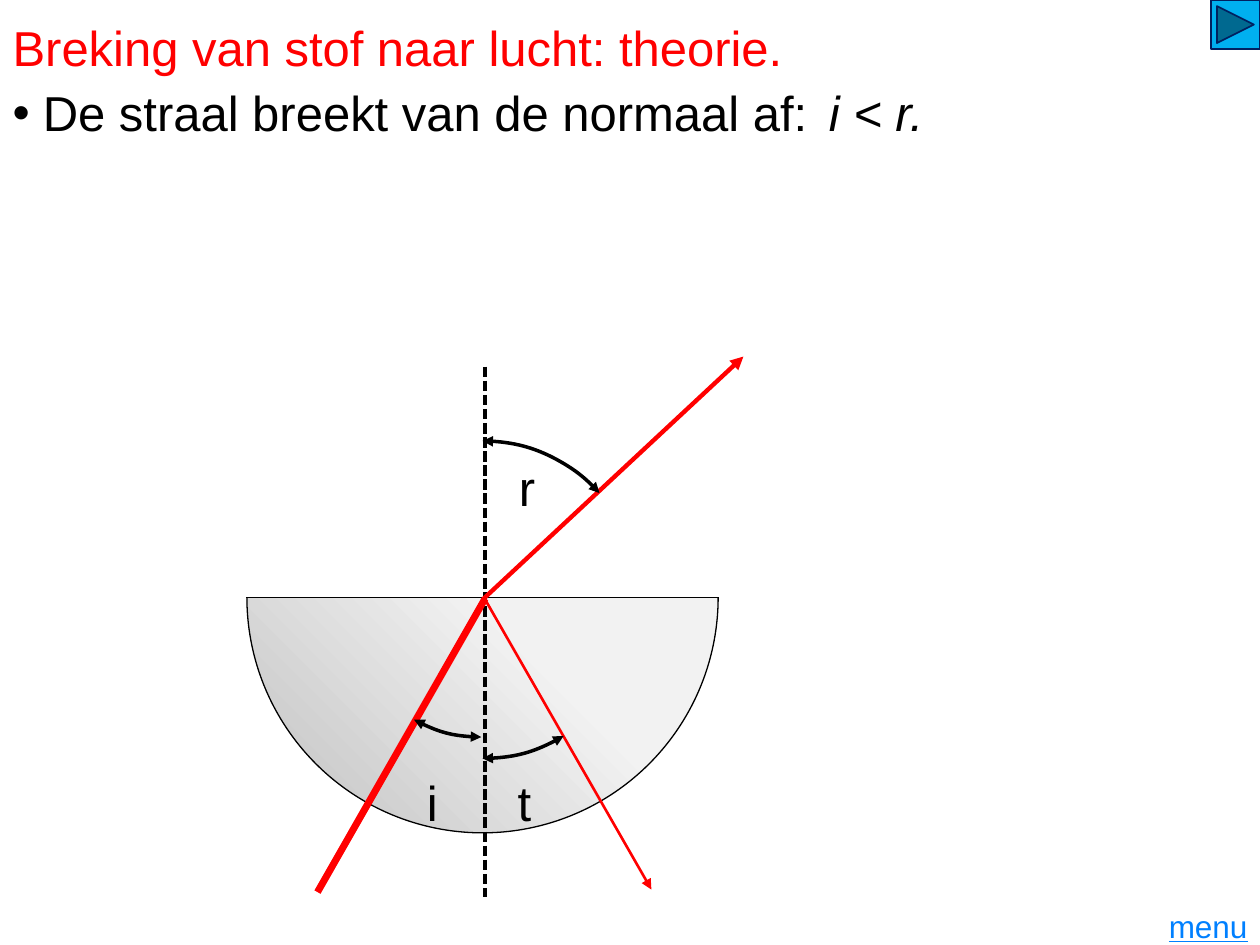
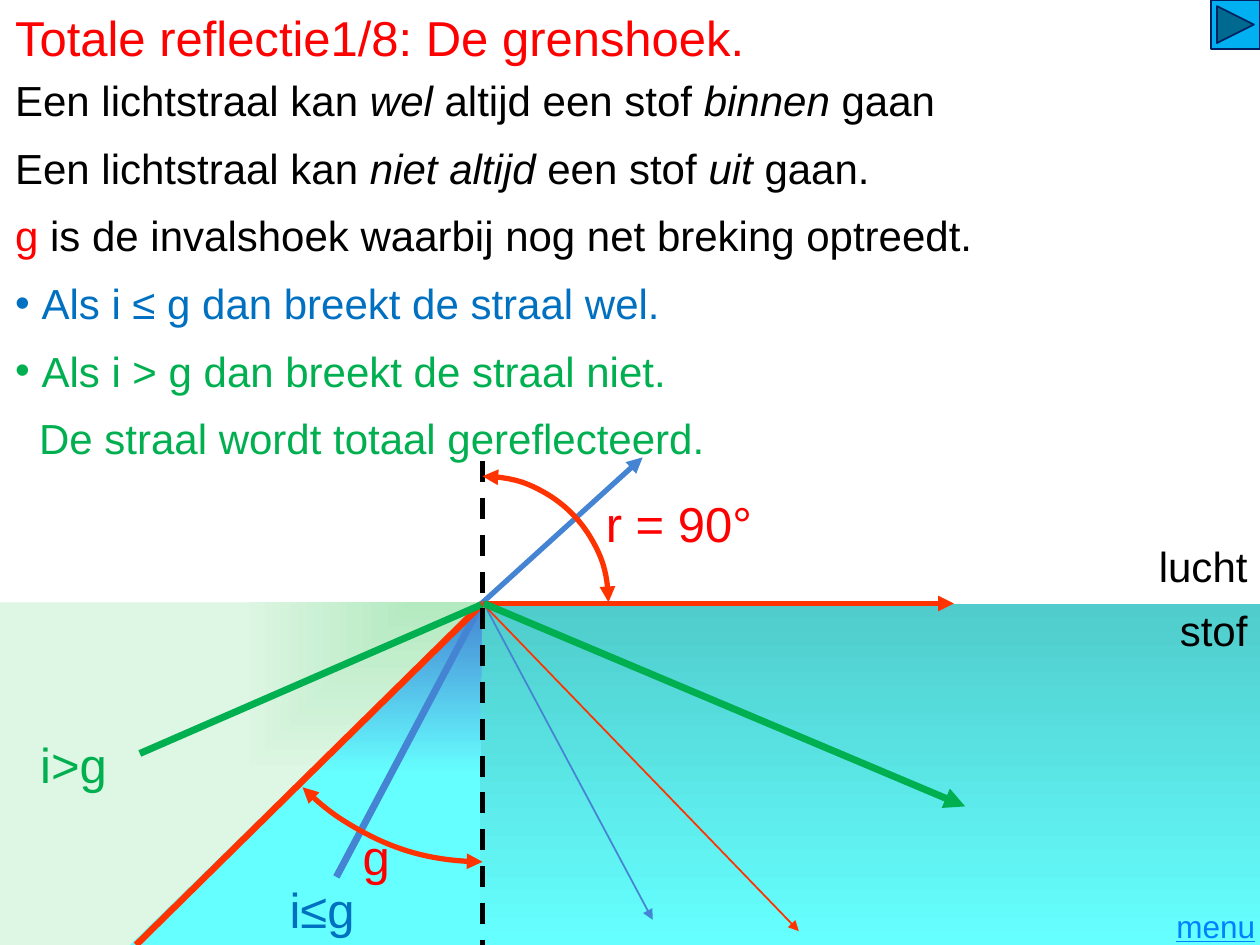
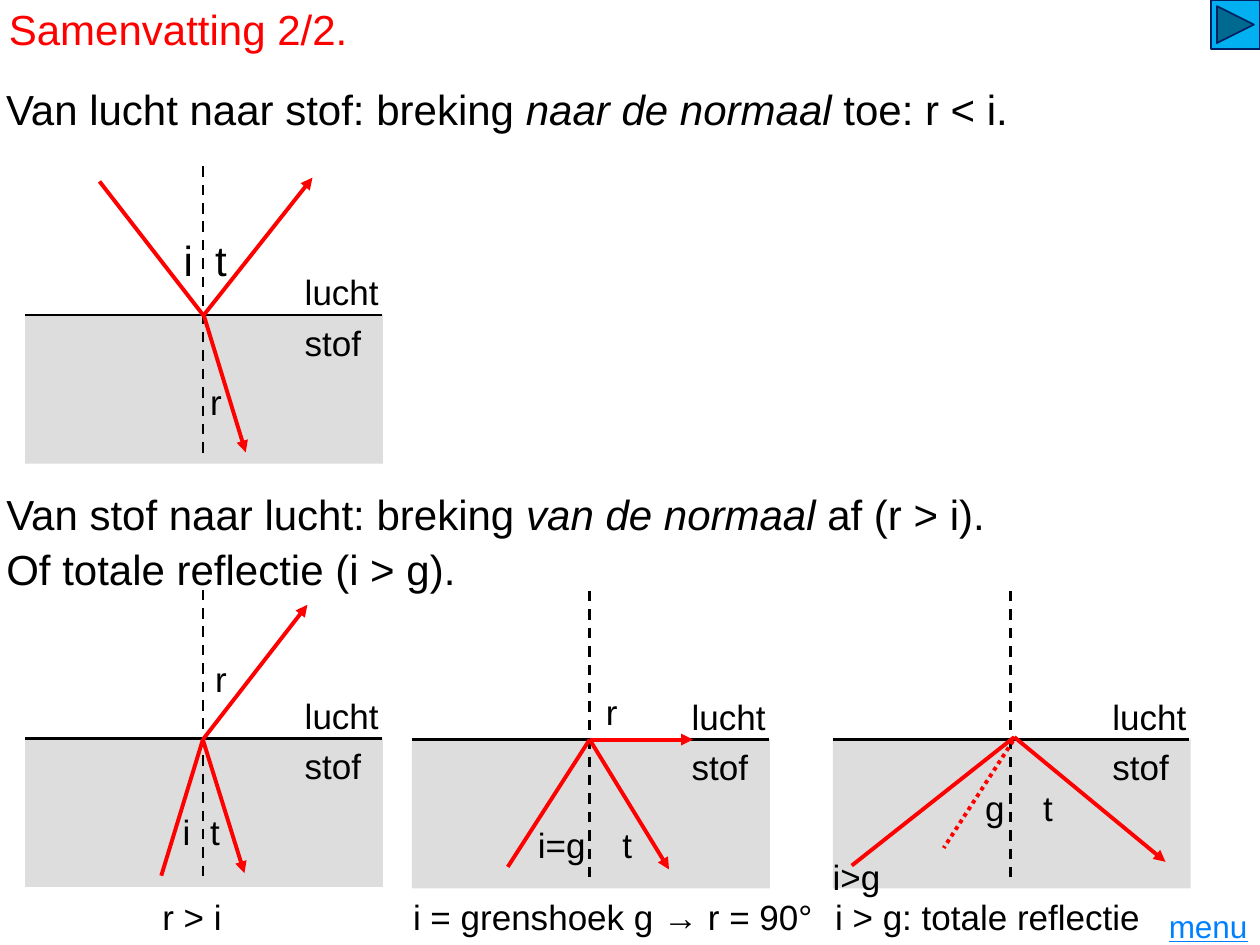
from lxml import etree
from pptx import Presentation
from pptx import util as u
from pptx.dml.color import RGBColor
from pptx.enum import dml, shapes, text
from pptx.oxml.ns import qn

COLORS = {
    "black": "000000", "red": "FF0000", "orange": "FF3300", "blue": "0070C0",
    "ray blue": "4584D3", "green": "00B050", "link": "0080FF", "grey": "DDDDDD",
    "button": "00B0F0", "navy": "002060", "light grey": "F2F2F2", "mid grey": "BFBFBF",
    "teal": "50CCCC", "cyan": "66FFFF", "mint": "B4EAC0", "pale mint": "DEF6E4",
}
RGB = {name: RGBColor.from_string(value) for name, value in COLORS.items()}
FONT = "Arial"
TOP, MIDDLE = text.MSO_ANCHOR.TOP, text.MSO_ANCHOR.MIDDLE
LEFT, RIGHT = text.PP_ALIGN.LEFT, text.PP_ALIGN.RIGHT
DASH, SHORT_DASH, DOTS = (dml.MSO_LINE.DASH, dml.MSO_LINE.SQUARE_DOT,
                          dml.MSO_LINE.ROUND_DOT)
ARC, RECTANGLE = shapes.MSO_SHAPE.ARC, shapes.MSO_SHAPE.RECTANGLE
STRAIGHT = shapes.MSO_CONNECTOR.STRAIGHT
ITALIC = {"italic": True}


def write(box, at, lines, size, ink="black", anchor=TOP, align=LEFT, gap=0, **formats):
    """Place a text shape and fill it.

    A line is a string or a dict with text, ink, accent, margin and bullet;
    the words between asterisks get the accent format.
    """
    box.left, box.top, box.width, box.height = map(u.Inches, at)
    frame = box.text_frame
    frame.word_wrap = True
    frame.auto_size = text.MSO_AUTO_SIZE.NONE
    frame.vertical_anchor = anchor
    for number, line in enumerate(lines if isinstance(lines, list) else [lines]):
        line = {"text": line} if isinstance(line, str) else line
        para = frame.add_paragraph() if number else frame.paragraphs[0]
        margin, bullet = u.Inches(line.get("margin", 0)), line.get("bullet")
        props = para._p.get_or_add_pPr()
        props.set("marL", str(margin))
        props.set("indent", str(-margin if bullet else 0))
        if bullet:
            etree.SubElement(props, qn("a:buFont")).set("typeface", FONT)
            etree.SubElement(props, qn("a:buChar")).set("char", "•")
        else:
            etree.SubElement(props, qn("a:buNone"))
        para.alignment = align
        para.space_before = u.Pt(gap if number else 0)
        for index, words in enumerate(line["text"].split("*")):
            if not words:
                continue
            span = para.add_run()
            span.text = words
            accent = line.get("accent", ITALIC) if index % 2 else {}
            values = {"name": FONT, "size": u.Pt(size), **formats, **accent}
            color = values.pop("ink", line.get("ink", ink))
            for name, value in values.items():
                setattr(span.font, name, value)
            span.font.color.rgb = RGB[color]


def stroke(shape, ink, width, dash=None, arrows=()):
    """Set an outline without shadow; arrows holds "head" and/or "tail"."""
    shape.line.color.rgb = RGB[ink]
    shape.line.width = u.Pt(width)
    if dash:
        shape.line.dash_style = dash
    props = shape._element.spPr
    for end in arrows:
        etree.SubElement(props.find(qn("a:ln")), qn(f"a:{end}End")).set("type", "triangle")
    etree.SubElement(props, qn("a:effectLst"))


BOTH, TAIL = ("head", "tail"), ("tail",)
deck = Presentation()
deck.slide_width, deck.slide_height = u.Inches(10), u.Inches(7.5)
layout = deck.slide_layouts[1]
refraction, critical, summary = pages = [deck.slides.add_slide(layout) for _ in range(3)]
gradients = []  # shape, start colour, end colour, start position, angle (None: from corner)
strokes = []    # page, start, end, colour, width, dash, arrows
labels = []     # page, box, words, size, colour, alignment

# Titles
for page, at, words, size, anchor in [
    (refraction, (0, 0, 7.83, 0.75), "Breking van stof naar lucht: theorie.", 28, MIDDLE),
    (critical, (0.02, 0.01, 9.5, 0.57), "Totale reflectie1/8: De grenshoek.", 28, TOP),
    (summary, (-0.03, -0.02, 3.54, 0.5), "Samenvatting 2/2.", 24, TOP),
]:
    write(page.shapes.title, at, words, size, "red", anchor)

# From substance to air
write(refraction.placeholders[1], (0, 0.64, 8.23, 0.5),
      {"text": "De straal breekt van de normaal af:", "margin": 0.24, "bullet": True},
      28, anchor=MIDDLE)
write(refraction.shapes.add_textbox(0, 0, 0, 0), (6.48, 0.6, 1.22, 0.58),
      "*i < r.*", 28, anchor=MIDDLE)
half_disc = refraction.shapes.add_shape(ARC, *map(u.Inches, (1.96, 2.87, 3.74, 3.74)))
half_disc.adjustments[0], half_disc.adjustments[1] = 0, 108
stroke(half_disc, "black", 0)
gradients.append((half_disc, "light grey", "mid grey", 0.5, 225))
strokes += [
    (refraction, (5.7, 4.74), (1.96, 4.74), "black", 0.75, None, ()),
    (refraction, (3.85, 2.91), (3.85, 7.12), "black", 2, SHORT_DASH, ()),
    (refraction, (2.52, 7.08), (3.85, 4.75), "red", 4, None, ()),
    (refraction, (3.84, 4.75), (5.9, 2.83), "red", 2.5, None, TAIL),
    (refraction, (3.84, 4.74), (5.17, 7.06), "red", 1.5, None, TAIL),
]
labels += [(refraction, (left, top, 0.75, 0.57), words, 28, "black", LEFT)
           for left, top, words in [(3.29, 6.08, "i"), (4.02, 3.58, "r"), (4.01, 6.08, "t")]]

# Critical angle
write(critical.placeholders[1], (0.02, 0.54, 9.58, 3.15), [
    "Een lichtstraal kan *wel *altijd een stof *binnen *gaan",
    "Een lichtstraal kan *niet altijd *een stof *uit *gaan.",
    {"text": "*g* is de invalshoek waarbij nog net breking optreedt.", "accent": {"ink": "red"}},
    {"text": "Als i ≤ g dan breekt de straal wel.", "ink": "blue", "margin": 0.21, "bullet": True},
    {"text": "Als i > g dan breekt de straal niet.", "ink": "green", "margin": 0.21,
     "bullet": True},
    {"text": "De straal wordt totaal gereflecteerd.", "ink": "green", "margin": 0.19},
], 24, gap=9.9)
substance = critical.shapes.add_shape(RECTANGLE, *map(u.Inches, (0, 4.79, 10, 2.71)))
gradients.append((substance, "teal", "cyan", 0, 270))
for corners, start, end in [
    ([(3.82, 4.79), (3.81, 7.5), (1.02, 7.5)], "ray blue", "cyan"),
    ([(3.82, 4.78), (1.03, 7.5), (0, 7.5), (0, 4.78)], "mint", "pale mint"),
]:
    outline = [tuple(map(u.Inches, corner)) for corner in corners]
    builder = critical.shapes.build_freeform(*outline[0], scale=1.0)
    builder.add_line_segments(outline[1:], close=True)
    gradients.append((builder.convert_to_shape(), start, end, 0, None))
for shape, *_ in gradients[1:]:
    shape.line.fill.background()
    shape.shadow.inherit = False
strokes += [
    (critical, (3.81, 4.8), (5.1, 3.63), "ray blue", 3, None, TAIL),
    (critical, (3.84, 4.79), (5.18, 7.3), "ray blue", 1, None, TAIL),
    (critical, (3.83, 4.79), (6.34, 7.39), "orange", 1, None, TAIL),
    (critical, (3.83, 4.79), (7.57, 4.79), "orange", 3, None, TAIL),
    (critical, (2.67, 6.96), (3.82, 4.79), "ray blue", 4, None, ()),
    (critical, (1.08, 7.5), (3.83, 4.79), "orange", 3.75, None, ()),
    (critical, (1.11, 5.98), (3.82, 4.8), "green", 4, None, ()),
    (critical, (3.84, 4.79), (7.66, 6.4), "green", 4, None, TAIL),
    (critical, (3.83, 3.66), (3.83, 7.5), "black", 3, DASH, ()),
]
labels += [
    (critical, (8.5, 4.24, 1.5, 0.5), "lucht", 24, "black", RIGHT),
    (critical, (8.5, 4.75, 1.5, 0.5), "stof", 24, "black", RIGHT),
    (critical, (2.2, 6.93, 0.75, 0.57), "i≤g", 28, "blue", LEFT),
    (critical, (0.22, 5.78, 0.92, 0.57), "i>g", 28, "green", LEFT),
    (critical, (2.78, 6.51, 0.75, 0.57), "g", 28, "red", LEFT),
    (critical, (4.71, 3.87, 1.92, 0.57), "r = 90°", 28, "red", LEFT),
]

# Summary: each panel has a surface, a normal, rays and labels
write(summary.shapes.add_textbox(0, 0, 0, 0), (-0.05, 0.61, 9.96, 0.5),
      "Van lucht naar stof: breking *naar de normaal *toe: r < i.", 24)
write(summary.placeholders[1], (-0.05, 3.83, 9.96, 0.92),
      ["Van stof naar lucht: breking *van de normaal *af (r > i).",
       "Of totale reflectie (i > g)."], 24, gap=2.6)
panels = [  # left, surface, rays (start, end, dash, arrows), labels (left, top, words, size)
    (0.2, 2.5,
     [((0.79, 1.44), (1.62, 2.51), None, ()), ((1.62, 2.51), (1.95, 3.59), None, TAIL),
      ((1.61, 2.51), (2.48, 1.41), None, TAIL)],
     [(1.36, 1.81, "i", 24), (1.61, 1.81, "t", 24), (1.57, 2.97, "r", 20)]),
    (0.2, 5.86,
     [((1.28, 6.95), (1.61, 5.87), None, ()), ((1.61, 5.87), (2.44, 4.8), None, TAIL),
      ((1.61, 5.87), (1.94, 6.93), None, TAIL)],
     [(1.35, 6.38, "i", 20), (1.57, 6.38, "t", 20), (1.61, 5.17, "r", 20)]),
    (3.27, 5.87,
     [((4.03, 6.88), (4.68, 5.87), None, ()), ((4.68, 5.87), (5.5, 5.87), None, TAIL),
      ((4.68, 5.87), (5.31, 6.9), None, TAIL)],
     [(4.17, 6.49, "i=g", 20), (4.84, 6.49, "t", 20), (4.71, 5.43, "r", 20)]),
    (6.61, 5.87,
     [((6.76, 6.87), (8.05, 5.85), None, ()), ((8.05, 5.85), (9.25, 6.84), None, TAIL),
      ((8.04, 5.88), (7.49, 6.73), DOTS, ())],
     [(6.51, 6.74, "i>g", 20), (7.72, 6.19, "g", 20), (8.18, 6.19, "t", 20)]),
]
for left, surface, rays, names in panels:
    block = summary.shapes.add_shape(RECTANGLE, *map(u.Inches, (left, surface, 2.84, 1.18)))
    block.fill.solid()
    block.fill.fore_color.rgb = RGB["grey"]
    block.line.fill.background()
    block.shadow.inherit = False
    normal = left + 1.41
    strokes += [
        (summary, (left, surface), (left + 2.83, surface), "black", 1.5, None, ()),
        (summary, (normal, surface - 1.18), (normal, surface + 1.1), "black", 1.5, DASH, ()),
    ]
    strokes += [(summary, start, end, "red", 2.25, dash, arrows)
                for start, end, dash, arrows in rays]
    names = names + [(left + 2.12, surface - 0.4, "lucht", 20),
                     (left + 2.12, surface, "stof", 20)]
    labels += [(summary, (x, y, 0.85, 0.44), words, size, "black", LEFT)
               for x, y, words, size in names]
for left, width, caption in [(1.19, 1.1, "r > i"), (3.18, 3.5, "i = grenshoek g → r = 90°"),
                             (6.53, 3.4, "i > g: totale reflectie")]:
    write(summary.shapes.add_textbox(0, 0, 0, 0), (left, 6.98, width, 0.58),
          caption, 20, anchor=MIDDLE)

# Gradients, rays, angle arcs and labels of all pages
for shape, start, end, position, angle in gradients:
    shape.fill.gradient()
    for stop, color, place in zip(shape.fill.gradient_stops, (start, end), (position, 1)):
        stop.color.rgb, stop.position = RGB[color], place
    if angle is not None:
        shape.fill.gradient_angle = angle
        continue
    linear = shape._element.spPr.find(qn("a:gradFill")).find(qn("a:lin"))
    corner = etree.Element(qn("a:path"), {"path": "rect"})
    etree.SubElement(corner, qn("a:fillToRect"), {"l": "100000", "b": "100000"})
    linear.getparent().replace(linear, corner)

for page, start, end, ink, width, dash, arrows in strokes:
    ray = page.shapes.add_connector(STRAIGHT, *map(u.Inches, start + end))
    stroke(ray, ink, width, dash, arrows)

for page, x, y, radius, first, last, ink, width in [
    (refraction, 3.83, 4.75, 1.25, 270, 318, "black", 2),
    (refraction, 3.83, 4.77, 1.25, 59, 90, "black", 2),
    (refraction, 3.82, 4.75, 1.1, 90, 119, "black", 2),
    (critical, 3.83, 4.82, 2.02, 90, 135, "orange", 3),
    (critical, 3.83, 4.78, 1, 270, 0, "orange", 3),
]:
    box = (x - radius, y - radius, 2 * radius, 2 * radius)
    arc = page.shapes.add_shape(ARC, *map(u.Inches, box))
    arc.adjustments[0], arc.adjustments[1] = first * 0.6, last * 0.6
    arc.fill.background()
    stroke(arc, ink, width, arrows=BOTH)

for page, at, words, size, ink, align in labels:
    write(page.shapes.add_textbox(0, 0, 0, 0), at, words, size, ink, align=align)

# Navigation
for page, menu_left in zip(pages, (9.06, 9.12, 9.06)):
    button = page.shapes.add_shape(shapes.MSO_SHAPE.ACTION_BUTTON_FORWARD_OR_NEXT,
                                   *map(u.Inches, (9.61, 0, 0.39, 0.39)))
    button.fill.solid()
    button.fill.fore_color.rgb = RGB["button"]
    stroke(button, "navy", 1)
    write(page.shapes.add_textbox(0, 0, 0, 0), (menu_left, 7.19, 0.94, 0.31),
          "menu", 18, "link", MIDDLE, RIGHT, underline=True)

deck.save("out.pptx")
